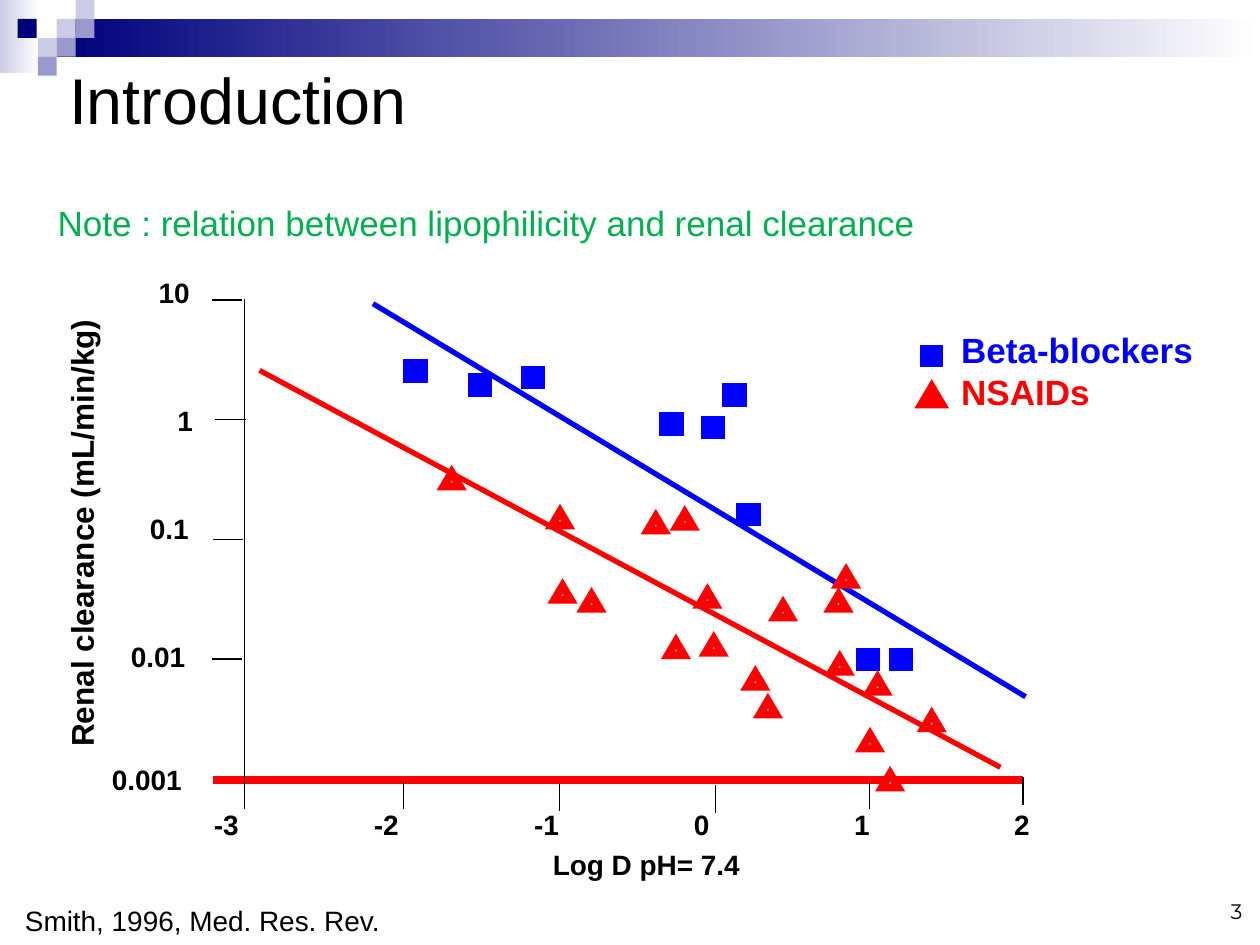
from typing import NamedTuple

from lxml import etree
from pptx import Presentation
from pptx.dml.color import RGBColor
from pptx.enum import shapes, text
from pptx.oxml import ns
from pptx.util import Inches, Pt

BLACK = RGBColor(0x00, 0x00, 0x00)
WHITE = RGBColor(0xFF, 0xFF, 0xFF)
NAVY = RGBColor(0x00, 0x00, 0x7D)
LILAC = RGBColor(0xCC, 0xCC, 0xE6)
LAVENDER = RGBColor(0x99, 0x99, 0xCC)
GREEN = RGBColor(0x00, 0xB0, 0x50)
BLUE = RGBColor(0x00, 0x00, 0xFF)
RED = RGBColor(0xFF, 0x00, 0x00)
CYAN = RGBColor(0x00, 0xFF, 0xFF)


class Box(NamedTuple):
    left: float
    top: float
    width: float
    height: float

    def lengths(self) -> list[int]:
        return [Inches(value) for value in self]


class Point(NamedTuple):
    x: float
    y: float


class Marker(NamedTuple):
    kind: shapes.MSO_SHAPE
    width: float
    fill: RGBColor
    line: RGBColor
    weight: float


class Label(NamedTuple):
    words: str
    box: Box
    size: float = 16
    color: RGBColor = BLACK
    bold: bool = True
    wrap: bool = False
    anchor: text.MSO_ANCHOR = text.MSO_ANCHOR.TOP
    align: text.PP_ALIGN = text.PP_ALIGN.LEFT
    font: str = "Arial"
    rotation: float = 0


MARKER_HEIGHT = 0.11
SQUARE = Marker(shapes.MSO_SHAPE.RECTANGLE, 0.12, BLUE, BLUE, 5.5)
TRIANGLE = Marker(shapes.MSO_SHAPE.ISOSCELES_TRIANGLE, 0.13, CYAN, RED, 4.5)
LEGEND_SQUARE = SQUARE._replace(weight=4.5)
LEGEND_TRIANGLE = TRIANGLE._replace(fill=BLUE, weight=6)

BETA_BLOCKERS = [
    (5.77, 3.08), (5.27, 3.31), (5.6, 3.34), (5.88, 4.03), (4.17, 2.94),
    (3.75, 3), (3.24, 2.89), (7.09, 5.18), (6.83, 5.18),
]
NSAIDS = [
    (5.37, 4.07), (5.14, 4.1), (3.52, 3.75), (4.4, 4.65), (6.65, 4.53),
    (6.59, 4.72), (6.15, 4.79), (5.55, 4.69), (4.38, 4.06), (6.03, 5.56),
    (6.84, 5.83), (7.33, 5.67), (6.9, 5.38), (6.6, 5.22), (5.93, 5.34),
    (5.6, 5.07), (5.3, 5.09), (4.63, 4.72), (7, 6.14),
]
TILE = 0.15
TILES = [
    (0.45, 0.15, LILAC), (0.6, 0, LILAC), (0.6, 0.15, LAVENDER),
    (0.3, 0.3, LILAC), (0.14, 0.15, NAVY), (0.45, 0.3, LAVENDER),
    (0.3, 0.45, LAVENDER),
]
X_TICKS = [(8.12, 6.17), (6.9, 6.2), (5.68, 6.23), (4.44, 6.22), (3.2, 6.2)]
Y_TICK_RIGHTS = [1.92, 1.95, 1.93, 1.92]
Y_LABELS = [
    Label("0.001", Box(0.79, 6, 0.76, 0.37)),
    Label("0.01", Box(0.94, 5.03, 0.64, 0.37)),
    Label("0.1", Box(1.09, 4.01, 0.51, 0.37)),
    Label("1", Box(1.31, 3.15, 0.33, 0.37)),
    Label("10", Box(1.16, 2.14, 0.45, 0.37)),
]
MIDDLE = text.MSO_ANCHOR.MIDDLE
CAPTIONS = [
    Label("Note : relation between lipophilicity and renal clearance",
          Box(0.36, 1.4, 9, 0.73), 20, GREEN, False, True, MIDDLE),
    Label("Introduction", Box(0.45, 0.41, 9.16, 0.75), 36.9, BLACK, False,
          True, MIDDLE),
    Label("Smith, 1996, Med. Res. Rev.", Box(0.1, 7.12, 3.06, 0.37),
          bold=False),
    Label("Log D pH= 7.4", Box(4.29, 6.68, 1.7, 0.37)),
    Label("Renal clearance (mL/min/kg)", Box(-1.31, 3.87, 3.91, 0.4), 18,
          wrap=True, rotation=270),
    Label("3", Box(7.43, 6.88, 2.53, 0.5), 12, BLACK, False, True,
          text.MSO_ANCHOR.BOTTOM, text.PP_ALIGN.RIGHT, "Montserrat"),
]


def add_block(slide, box: Box, color: RGBColor, fades: bool = False) -> None:
    """Draw a borderless rectangle, optionally fading to white rightwards."""
    block = slide.shapes.add_shape(shapes.MSO_SHAPE.RECTANGLE, *box.lengths())
    block.shadow.inherit = False
    block.line.fill.background()
    if fades:
        block.fill.gradient()
        block.fill.gradient_angle = 0
        for stop, shade, position in zip(block.fill.gradient_stops,
                                         (color, WHITE), (0, 1)):
            stop.color.rgb = shade
            stop.position = position
    else:
        block.fill.solid()
        block.fill.fore_color.rgb = color


def add_line(slide, start: Point, end: Point, color: RGBColor = BLACK,
             weight: float = 0.75) -> None:
    line = slide.shapes.add_connector(
        shapes.MSO_CONNECTOR.STRAIGHT, *(Inches(v) for v in (*start, *end)))
    line.line.color.rgb = color
    line.line.width = Pt(weight)
    etree.SubElement(line._element.spPr, ns.qn("a:effectLst"))


def add_marker(slide, marker: Marker, left: float, top: float) -> None:
    box = Box(left, top, marker.width, MARKER_HEIGHT)
    dot = slide.shapes.add_shape(marker.kind, *box.lengths())
    dot.shadow.inherit = False
    dot.fill.solid()
    dot.fill.fore_color.rgb = marker.fill
    dot.line.color.rgb = marker.line
    dot.line.width = Pt(marker.weight)
    miter = etree.SubElement(dot.line._get_or_add_ln(), ns.qn("a:miter"))
    miter.set("lim", "800000")


def add_label(slide, label: Label):
    area = slide.shapes.add_textbox(*label.box.lengths())
    area.rotation = label.rotation
    frame = area.text_frame
    frame.word_wrap = label.wrap
    frame.vertical_anchor = label.anchor
    frame.text = label.words
    for paragraph in frame.paragraphs:
        paragraph.alignment = label.align
        paragraph.font.name = label.font
        paragraph.font.size = Pt(label.size)
        paragraph.font.bold = label.bold
        paragraph.font.color.rgb = label.color
    return frame


def draw_banner(slide) -> None:
    add_block(slide, Box(0, 0, 0.31, 0.58), LILAC, fades=True)
    add_block(slide, Box(0.45, 0.15, 9.55, 0.3), NAVY, fades=True)
    for left, top, color in TILES:
        add_block(slide, Box(left, top, TILE, TILE), color)


def draw_axes(slide) -> None:
    add_line(slide, Point(8.12, 6.19), Point(1.69, 6.19), RED, 4.5)
    add_line(slide, Point(1.94, 6.42), Point(1.94, 2.37))
    for x, top in X_TICKS:
        add_line(slide, Point(x, top), Point(x, top + 0.22))
    for index, right in enumerate(Y_TICK_RIGHTS):
        y = 2.38 + 0.95 * index
        add_line(slide, Point(right, y), Point(right - 0.24, y))
    for index, value in enumerate(range(-3, 3)):
        width = 0.4 if value < 0 else 0.33
        add_label(slide, Label(str(value),
                               Box(1.6 + 1.27 * index, 6.36, width, 0.37)))
    for label in Y_LABELS:
        add_label(slide, label)


def draw_series(slide) -> None:
    add_line(slide, Point(7.94, 6.09), Point(2.06, 2.94), RED, 3)
    add_line(slide, Point(8.14, 5.53), Point(2.96, 2.41), BLUE, 3)
    for marker, places in ((SQUARE, BETA_BLOCKERS), (TRIANGLE, NSAIDS)):
        for left, top in places:
            add_marker(slide, marker, left, top)


def draw_legend(slide) -> None:
    add_marker(slide, LEGEND_SQUARE, 7.33, 2.77)
    add_marker(slide, LEGEND_TRIANGLE, 7.33, 3.09)
    names = add_label(slide, Label("Beta-blockers\nNSAIDs",
                                   Box(7.53, 2.56, 2.06, 0.77), 20, BLUE))
    names.paragraphs[1].font.color.rgb = RED


def main() -> None:
    deck = Presentation()
    deck.slide_width, deck.slide_height = Inches(10), Inches(7.5)
    slide = deck.slides.add_slide(deck.slide_layouts[6])
    draw_banner(slide)
    draw_axes(slide)
    draw_series(slide)
    draw_legend(slide)
    for caption in CAPTIONS:
        add_label(slide, caption)
    deck.save("out.pptx")


if __name__ == "__main__":
    main()
